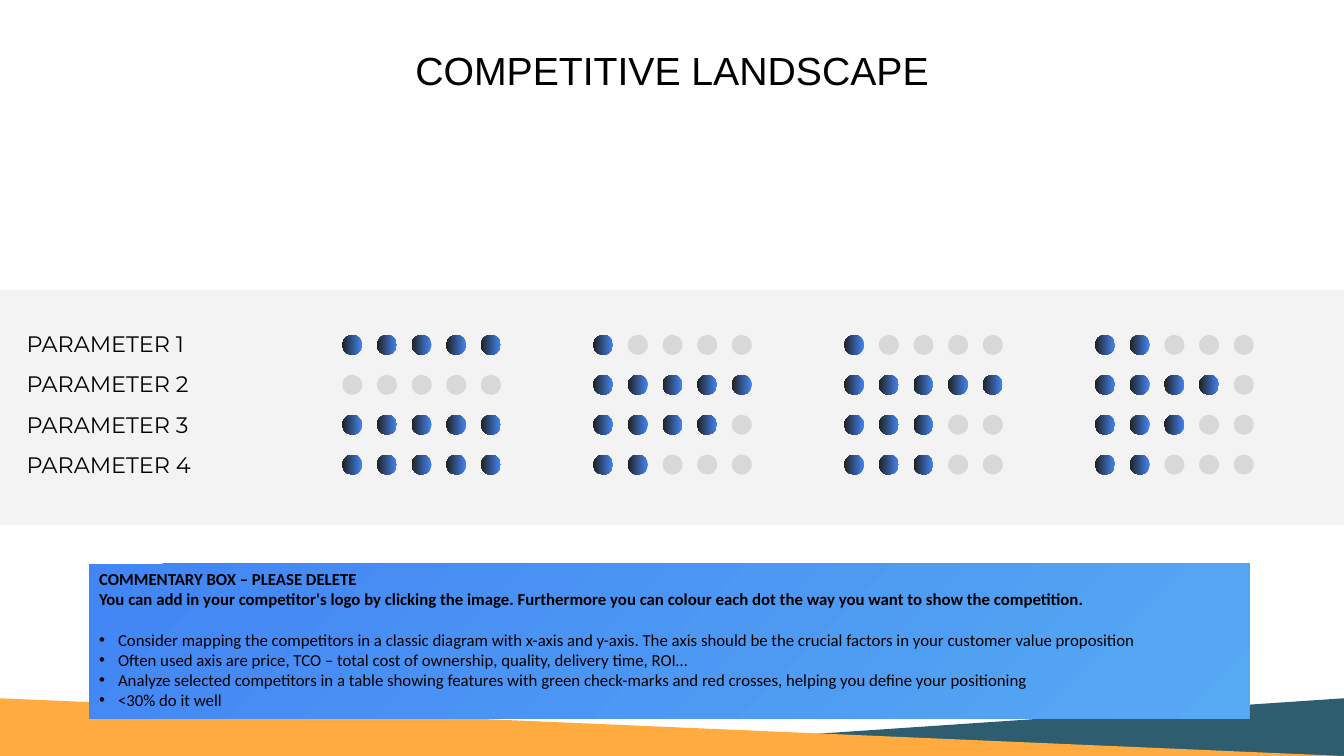
from dataclasses import dataclass

from lxml.etree import SubElement
from pptx import Presentation
from pptx.dml.color import RGBColor
from pptx.dml.fill import FillFormat
from pptx.enum.shapes import MSO_SHAPE as Shape
from pptx.enum.text import MSO_ANCHOR as Anchor, PP_ALIGN as Align
from pptx.oxml.ns import qn
from pptx.shapes.autoshape import Shape as AutoShape
from pptx.slide import Slide
from pptx.text.text import TextFrame
from pptx.util import Emu, Pt

EMU_PER_PX = 9525


@dataclass(frozen=True)
class Theme:
    black: str = "000000"
    grey: str = "D8D8D8"
    teal: str = "2D5D6F"
    orange: str = "FFAB40"
    dot_gradient: tuple[str, str] = ("4285F4", "212121")
    box_gradient: tuple[str, str] = ("4285F4", "56A9F3")
    title_font: str = "Arial"
    label_font: str = "Montserrat"
    body_font: str = "Calibri"
    title_size: int = 28
    label_size: int = 16
    body_size: int = 12


@dataclass(frozen=True)
class Box:
    left: int
    top: int
    width: int
    height: int

    def emu(self) -> tuple[Emu, Emu, Emu, Emu]:
        return px(self.left), px(self.top), px(self.width), px(self.height)


@dataclass(frozen=True)
class Parameter:
    name: str
    scores: tuple[int, ...]  # filled dots for each competitor


THEME = Theme()
SLIDE_WIDTH, SLIDE_HEIGHT = 1280, 720

PARAMETERS = [
    Parameter("PARAMETER 1", (5, 1, 1, 2)),
    Parameter("PARAMETER 2", (0, 5, 5, 4)),
    Parameter("PARAMETER 3", (5, 4, 3, 3)),
    Parameter("PARAMETER 4", (5, 2, 3, 2)),
]
DOTS_PER_SCORE = 5
DOT_SIZE, DOT_PITCH = 19, 33
GRID_LEFT, GRID_TOP = 326, 319
COMPETITOR_PITCH, PARAMETER_PITCH = 239, 38

BULLET_INDENT = 18
COMMENTARY_HEADINGS = [
    "COMMENTARY BOX – PLEASE DELETE",
    "You can add in your competitor's logo by clicking the image. Furthermore you can "
    "colour each dot the way you want to show the competition.",
]
COMMENTARY_BULLETS = [
    "Consider mapping the competitors in a classic diagram with x-axis and y-axis. The axis "
    "should be the crucial factors in your customer value proposition",
    "Often used axis are price, TCO – total cost of ownership, quality, delivery time, ROI…",
    "Analyze selected competitors in a table showing features with green check-marks and red "
    "crosses, helping you define your positioning",
    "<30% do it well",
]


def px(length: int) -> Emu:
    return Emu(length * EMU_PER_PX)


def fill_solid(fill: FillFormat, color: str) -> None:
    fill.solid()
    fill.fore_color.rgb = RGBColor.from_string(color)


def fill_gradient(fill: FillFormat, colors: tuple[str, str], angle: int) -> None:
    fill.gradient()
    fill.gradient_angle = angle
    for stop, color in zip(fill.gradient_stops, colors):
        stop.color.rgb = RGBColor.from_string(color)


def add_plain_shape(slide: Slide, kind: Shape, box: Box) -> AutoShape:
    shape = slide.shapes.add_shape(kind, *box.emu())
    shape.shadow.inherit = False
    shape.line.fill.background()
    return shape


def write_lines(frame: TextFrame, lines: list[str], font: str, size: int,
                align: Align = Align.LEFT, spacing: float = 1.0) -> None:
    frame.word_wrap = True
    frame.text = "\n".join(lines)
    for paragraph in frame.paragraphs:
        paragraph.alignment = align
        paragraph.line_spacing = spacing
        for run in paragraph.runs:
            run.font.name = font
            run.font.size = Pt(size)
            run.font.color.rgb = RGBColor.from_string(THEME.black)


def add_background(slide: Slide) -> None:
    teal_wedge = add_plain_shape(slide, Shape.RIGHT_TRIANGLE, Box(464, 665, 816, 55))
    fill_solid(teal_wedge.fill, THEME.teal)
    teal_wedge._element.spPr.find(qn("a:xfrm")).set("flipH", "1")

    orange_wedge = add_plain_shape(slide, Shape.RIGHT_TRIANGLE, Box(0, 665, SLIDE_WIDTH, 55))
    fill_solid(orange_wedge.fill, THEME.orange)

    band = add_plain_shape(slide, Shape.RECTANGLE, Box(0, 276, SLIDE_WIDTH, 224))
    fill_solid(band.fill, THEME.grey)
    color = band._element.spPr.find(qn("a:solidFill")).find(qn("a:srgbClr"))
    SubElement(color, qn("a:alpha"), val="30000")


def add_title(slide: Slide) -> None:
    frame = slide.shapes.add_textbox(*Box(0, 0, SLIDE_WIDTH, 139).emu()).text_frame
    frame.vertical_anchor = Anchor.MIDDLE
    write_lines(frame, ["COMPETITIVE LANDSCAPE"], THEME.title_font, THEME.title_size,
                Align.CENTER, 0.9)


def add_score(slide: Slide, left: int, top: int, score: int) -> None:
    for index in range(DOTS_PER_SCORE):
        box = Box(left + index * DOT_PITCH, top, DOT_SIZE, DOT_SIZE)
        dot = add_plain_shape(slide, Shape.FLOWCHART_CONNECTOR, box)
        if index < score:
            fill_gradient(dot.fill, THEME.dot_gradient, 180)
        else:
            fill_solid(dot.fill, THEME.grey)


def add_comparison(slide: Slide) -> None:
    for row, parameter in enumerate(PARAMETERS):
        for column, score in enumerate(parameter.scores):
            add_score(slide, GRID_LEFT + column * COMPETITOR_PITCH,
                      GRID_TOP + row * PARAMETER_PITCH, score)

    frame = slide.shapes.add_textbox(*Box(16, 297, 243, 248).emu()).text_frame
    names = [parameter.name for parameter in PARAMETERS]
    write_lines(frame, names, THEME.label_font, THEME.label_size, spacing=1.5)


def add_commentary(slide: Slide) -> None:
    box = add_plain_shape(slide, Shape.RECTANGLE, Box(85, 537, 1105, 147))
    fill_gradient(box.fill, THEME.box_gradient, 315)
    frame = box.text_frame
    frame.vertical_anchor = Anchor.TOP
    write_lines(frame, COMMENTARY_HEADINGS + COMMENTARY_BULLETS,
                THEME.body_font, THEME.body_size)

    heading_count = len(COMMENTARY_HEADINGS)
    headings = frame.paragraphs[:heading_count]
    for paragraph in headings:
        paragraph.runs[0].font.bold = True
    headings[-1].space_after = Pt(14.6)

    for paragraph in frame.paragraphs[heading_count:]:
        properties = paragraph._p.get_or_add_pPr()
        properties.set("marL", str(px(BULLET_INDENT)))
        properties.set("indent", str(px(-BULLET_INDENT)))
        bullet_color = SubElement(properties, qn("a:buClr"))
        SubElement(bullet_color, qn("a:srgbClr"), val=THEME.black)
        SubElement(properties, qn("a:buFont"), typeface=THEME.title_font)
        SubElement(properties, qn("a:buChar"), char="•")


def main() -> None:
    presentation = Presentation()
    presentation.slide_width = px(SLIDE_WIDTH)
    presentation.slide_height = px(SLIDE_HEIGHT)
    slide = presentation.slides.add_slide(presentation.slide_layouts[6])
    add_background(slide)
    add_title(slide)
    add_comparison(slide)
    add_commentary(slide)
    presentation.save("out.pptx")


if __name__ == "__main__":
    main()
